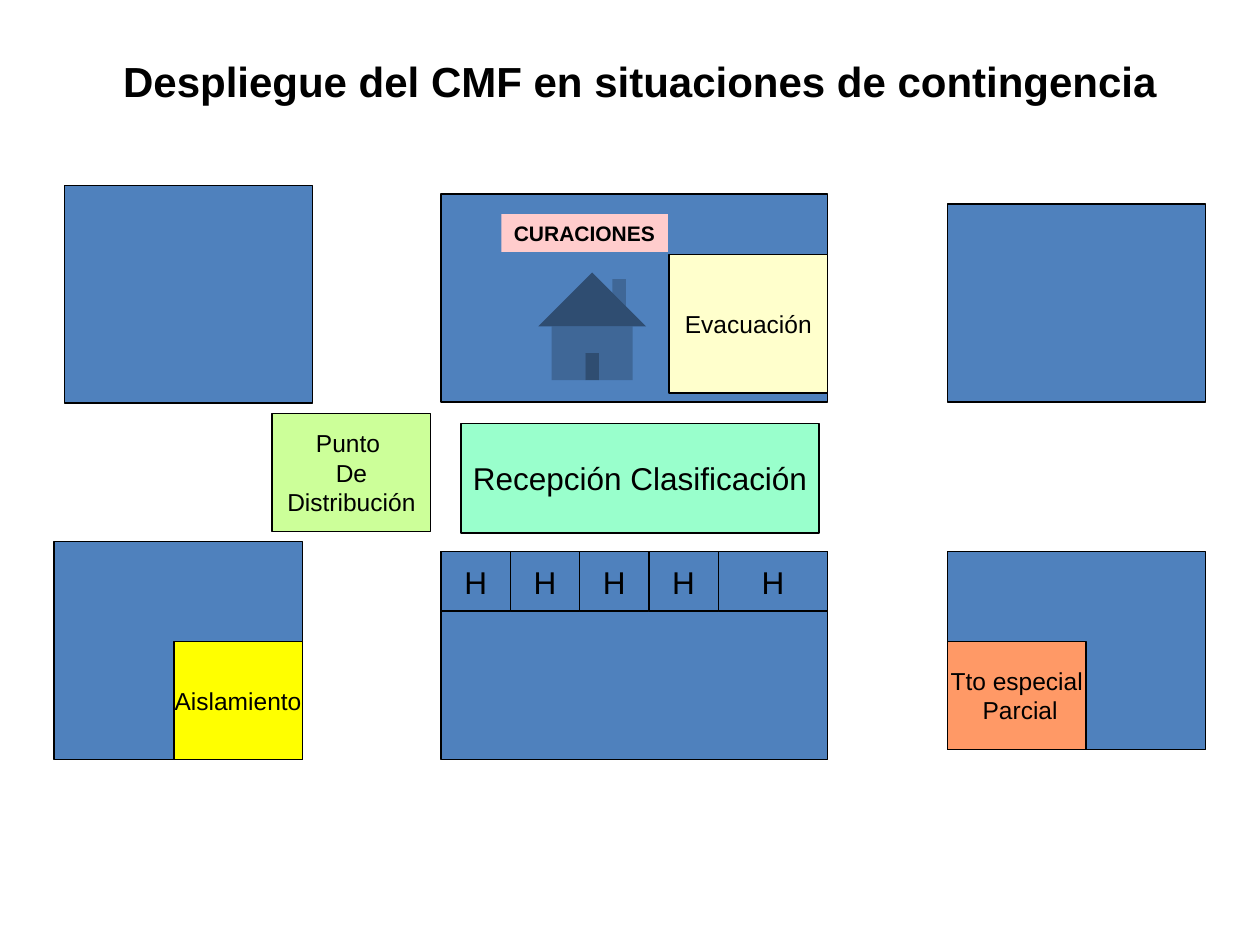
from dataclasses import dataclass

from pptx import Presentation
from pptx.dml.color import RGBColor
from pptx.enum.shapes import MSO_SHAPE
from pptx.enum.text import MSO_ANCHOR, MSO_AUTO_SIZE, PP_ALIGN
from pptx.util import Inches, Pt

RECT, HOME = MSO_SHAPE.RECTANGLE, MSO_SHAPE.ACTION_BUTTON_HOME
TOP, MIDDLE = MSO_ANCHOR.TOP, MSO_ANCHOR.MIDDLE
LEFT, CENTER = PP_ALIGN.LEFT, PP_ALIGN.CENTER
NO_FIT = MSO_AUTO_SIZE.NONE

BLACK = RGBColor(0x00, 0x00, 0x00)
BLUE = RGBColor(0x4F, 0x81, 0xBD)
LIME = RGBColor(0xCC, 0xFF, 0x99)
MINT = RGBColor(0x99, 0xFF, 0xCC)
PINK = RGBColor(0xFF, 0xCC, 0xCC)
CREAM = RGBColor(0xFF, 0xFF, 0xCC)
YELLOW = RGBColor(0xFF, 0xFF, 0x00)
ORANGE = RGBColor(0xFF, 0x99, 0x66)


@dataclass
class Area:
    left: float
    top: float
    width: float
    height: float
    fill: RGBColor = BLUE
    lines: tuple[str, ...] = ()
    size: int = 14
    bold: bool = False
    outlined: bool = True
    align: PP_ALIGN = CENTER
    anchor: MSO_ANCHOR = MIDDLE
    kind: MSO_SHAPE = RECT


BUILDINGS = [
    Area(0.51, 1.47, 1.97, 1.73),
    Area(3.5, 1.54, 3.07, 1.65),
    Area(7.52, 1.62, 2.05, 1.57),
    Area(0.43, 4.3, 1.97, 1.73),
    Area(3.5, 4.38, 3.07, 1.65),
    Area(7.52, 4.38, 2.05, 1.57),
    Area(4.13, 2.02, 1.14, 1.14, outlined=False, kind=HOME),
]
STATIONS = [
    Area(2.16, 3.28, 1.26, 0.94, LIME, ("Punto ", "De", "Distribución")),
    Area(3.66, 3.36, 2.84, 0.87, MINT, ("Recepción Clasificación",), 18),
    Area(3.98, 1.7, 1.32, 0.3, PINK, ("CURACIONES",), 12, bold=True,
         outlined=False, align=LEFT, anchor=TOP),
    Area(5.31, 2.02, 1.26, 1.1, CREAM, ("Evacuación",)),
    Area(1.38, 5.09, 1.02, 0.94, YELLOW, ("Aislamiento",)),
    Area(7.52, 5.09, 1.1, 0.86, ORANGE, ("Tto especial", " Parcial")),
]
BED_LEFT, BED_PITCH, BED_COUNT, LAST_BED_WIDTH = 3.5, 0.55, 5, 0.87
BEDS = [
    Area(BED_LEFT + i * BED_PITCH, 4.38,
         LAST_BED_WIDTH if i == BED_COUNT - 1 else BED_PITCH, 0.47,
         lines=("H",), size=18)
    for i in range(BED_COUNT)
]


def write_lines(tf, lines: tuple[str, ...], size: int, bold: bool,
                align: PP_ALIGN) -> None:
    font_format = {"name": "Arial", "size": Pt(size), "bold": bold}
    for i, line in enumerate(lines):
        p = tf.paragraphs[0] if i == 0 else tf.add_paragraph()
        p.alignment = align
        p.space_before = Pt(0)
        r = p.add_run()
        r.text = line
        for name, value in font_format.items():
            setattr(r.font, name, value)
        r.font.color.rgb = BLACK


def draw_area(shapes, area: Area) -> None:
    sp = shapes.add_shape(area.kind, Inches(area.left), Inches(area.top),
                          Inches(area.width), Inches(area.height))
    sp.shadow.inherit = False
    sp.fill.solid()
    sp.fill.fore_color.rgb = area.fill
    if area.outlined:
        sp.line.color.rgb = BLACK
        sp.line.width = Pt(0.75)
    else:
        sp.line.fill.background()
    if area.lines:
        tf = sp.text_frame
        tf.word_wrap = False
        tf.vertical_anchor = area.anchor
        write_lines(tf, area.lines, area.size, area.bold, area.align)


def draw_group(s, areas: list[Area]) -> None:
    group = s.shapes.add_group_shape()
    for area in areas:
        draw_area(group.shapes, area)


def add_title(s, text: str) -> None:
    title = s.shapes.title
    place = {"left": 0.39, "top": 0.39, "width": 9.38, "height": 6.8}
    for name, value in place.items():
        setattr(title, name, Inches(value))
    tf = title.text_frame
    tf.word_wrap = True
    tf.auto_size = NO_FIT
    tf.vertical_anchor = TOP
    write_lines(tf, (text,), 24, True, CENTER)


def main() -> None:
    prs = Presentation()
    prs.slide_width, prs.slide_height = Inches(10), Inches(7.5)
    s = prs.slides.add_slide(prs.slide_layouts[5])
    add_title(s, "Despliegue del CMF en situaciones de contingencia")
    draw_group(s, BUILDINGS)
    for station in STATIONS:
        draw_area(s.shapes, station)
    draw_group(s, BEDS)
    prs.save("out.pptx")


if __name__ == "__main__":
    main()
